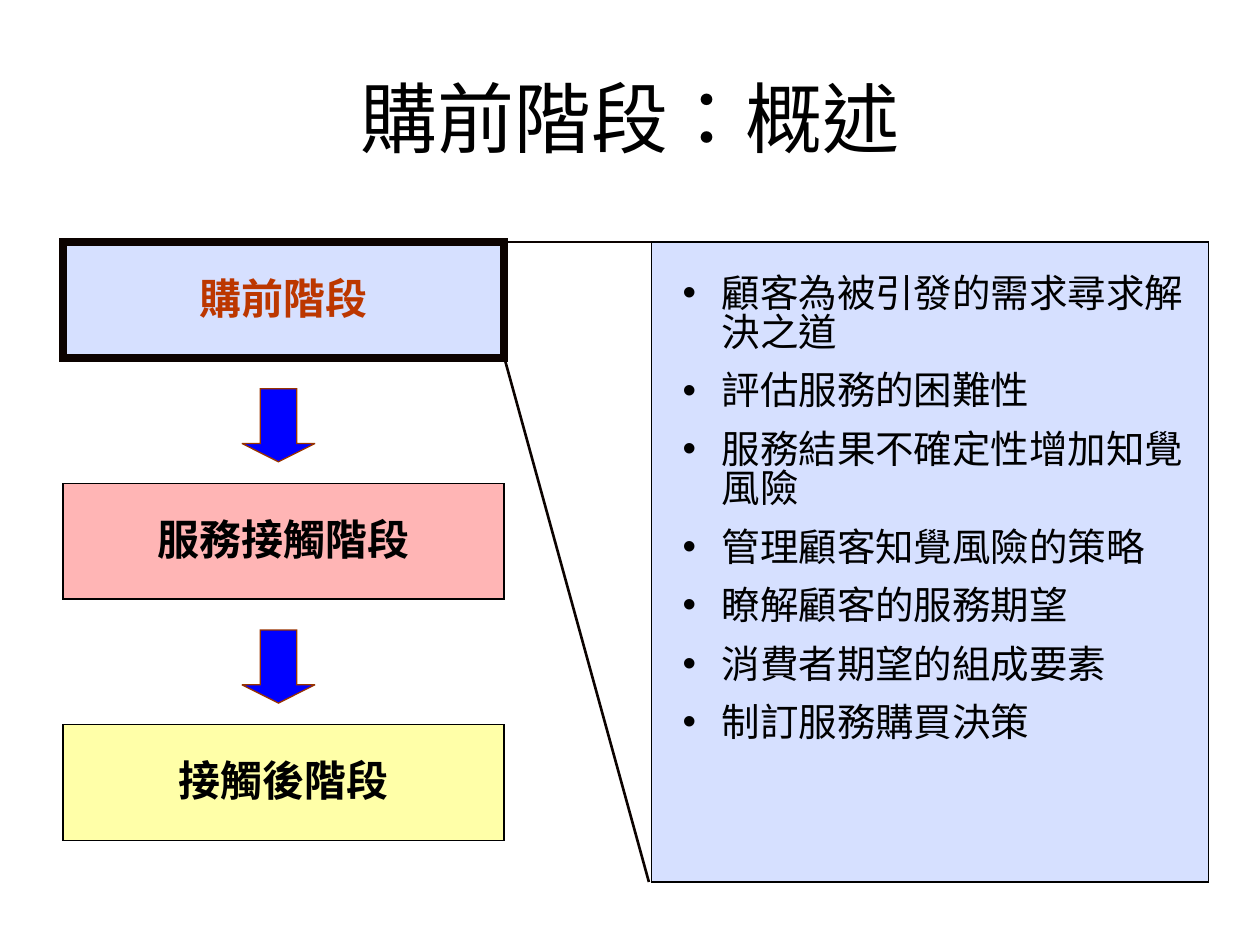
from lxml import etree
from pptx import Presentation
from pptx import util as u
from pptx.dml.color import RGBColor
from pptx.enum import lang, shapes, text
from pptx.oxml.ns import qn

Inches = u.Inches
COLORS = {
    "ink": "000000", "edge": "0C0300", "blue": "3366FF", "red": "FF0000",
    "yellow": "FFFF99", "accent": "BC3700", "arrow": "0000FF", "arrow_edge": "993300",
}
CJK_FONT = "Noto Sans CJK SC"
STAGES = [
    ("購前階段", "blue", 20, "edge", 4.5, "accent"),
    ("服務接觸階段", "red", 29, "ink", 0.75, "ink"),
    ("接觸後階段", "yellow", 85, "ink", 0.75, "ink"),
]
POINTS = [
    "顧客為被引發的需求尋求解決之道",
    "評估服務的困難性",
    "服務結果不確定性增加知覺風險",
    "管理顧客知覺風險的策略",
    "瞭解顧客的服務期望",
    "消費者期望的組成要素",
    "制訂服務購買決策",
]


def rgb(name):
    """Return the named colour."""
    return RGBColor.from_string(COLORS[name])


def style_font(para, name, size, color, bold=False):
    """Format every run of a paragraph."""
    for span in para.runs:
        span.font.name, span.font.size, span.font.bold = name, u.Pt(size), bold
        span.font.color.rgb = rgb(color)
        span.font.language_id = lang.MSO_LANGUAGE_ID.TRADITIONAL_CHINESE
        if name == CJK_FONT:
            etree.SubElement(span.font._element, qn("a:ea"), typeface=name)


def add_box(page, kind, box, fill, line, width, opacity=100):
    """Add a preset shape with a fill, a mitred outline and an opacity in percent."""
    shape = page.shapes.add_shape(kind, *map(Inches, box))
    shape.shadow.inherit = False
    shape.fill.solid()
    shape.fill.fore_color.rgb = rgb(fill)
    if opacity < 100:
        color = shape.fill._xPr.find(qn("a:solidFill"))[0]
        etree.SubElement(color, qn("a:alpha"), val=str(opacity * 1000))
    shape.line.color.rgb = rgb(line)
    shape.line.width = u.Pt(width)
    etree.SubElement(shape.line._get_or_add_ln(), qn("a:miter"), lim="800000")
    return shape


def add_title(page, box, words):
    """Place and format the title."""
    title = page.shapes.title
    title.left, title.top, title.width, title.height = map(Inches, box)
    frame = title.text_frame
    frame.text = words
    frame.vertical_anchor = text.MSO_ANCHOR.MIDDLE
    frame.paragraphs[0].alignment = text.PP_ALIGN.CENTER
    style_font(frame.paragraphs[0], CJK_FONT, 44, "ink")


def add_stages(page, box):
    """Stack the stage boxes evenly with a down arrow in each gap."""
    left, top, width, height = box
    stage_height, arrow_size = 0.92, 0.58
    step = (height - stage_height) / (len(STAGES) - 1)
    for index, (words, fill, opacity, line, weight, color) in enumerate(STAGES):
        y = top + index * step
        stage = add_box(page, shapes.MSO_SHAPE.RECTANGLE,
                        (left, y, width, stage_height), fill, line, weight, opacity)
        frame = stage.text_frame
        frame.text = words
        frame.word_wrap = False
        frame.vertical_anchor = text.MSO_ANCHOR.MIDDLE
        para = frame.paragraphs[0]
        para.alignment = text.PP_ALIGN.CENTER
        para.line_spacing = 0.95
        style_font(para, "Calibri", 24, color, bold=True)
        if index:
            add_box(page, shapes.MSO_SHAPE.DOWN_ARROW,
                    (left + 1.42, y - 0.75, arrow_size, arrow_size),
                    "arrow", "arrow_edge", 0.75).adjustments[1] = 0.25


def add_details(page, box):
    """Add the detail panel and its bulleted list."""
    left, top, width, height = box
    add_box(page, shapes.MSO_SHAPE.RECTANGLE, box, "blue", "ink", 0.75, 20)
    area = (left + 0.15, top + 0.22, width - 0.24, height - 0.9)
    frame = page.shapes.add_textbox(*map(Inches, area)).text_frame
    frame.word_wrap = True
    frame.text = "\n".join(POINTS)
    for para in frame.paragraphs:
        para.line_spacing = 0.85
        para.space_before = u.Pt(11)
        style_font(para, CJK_FONT, 22, "ink")
        props = para._p.get_or_add_pPr()
        props.set("marL", str(Inches(0.31)))
        props.set("indent", str(-Inches(0.31)))
        etree.SubElement(props, qn("a:buFont"), typeface="Arial")
        etree.SubElement(props, qn("a:buChar"), char="•")


def add_callout_line(page, start, end, width):
    """Draw a straight line from a stage corner to a panel corner."""
    line = page.shapes.add_connector(
        shapes.MSO_CONNECTOR.STRAIGHT, *map(Inches, start + end))
    line.line.color.rgb = rgb("edge")
    line.line.width = u.Pt(width)
    etree.SubElement(line._element.spPr, qn("a:effectLst"))


def main():
    """Build and save the deck."""
    deck = Presentation()
    deck.slide_width, deck.slide_height = Inches(10), Inches(7.5)
    page = deck.slides.add_slide(deck.slide_layouts[5])
    add_title(page, (0.5, 0.3, 9, 1.25), "購前階段：概述")
    add_stages(page, (0.5, 1.92, 3.5, 4.75))
    add_details(page, (5.17, 1.92, 4.42, 5.08))
    add_callout_line(page, (4, 1.92), (5.17, 1.92), 1.25)
    add_callout_line(page, (4, 2.83), (5.15, 7), 1.5)
    deck.save("out.pptx")


if __name__ == "__main__":
    main()
